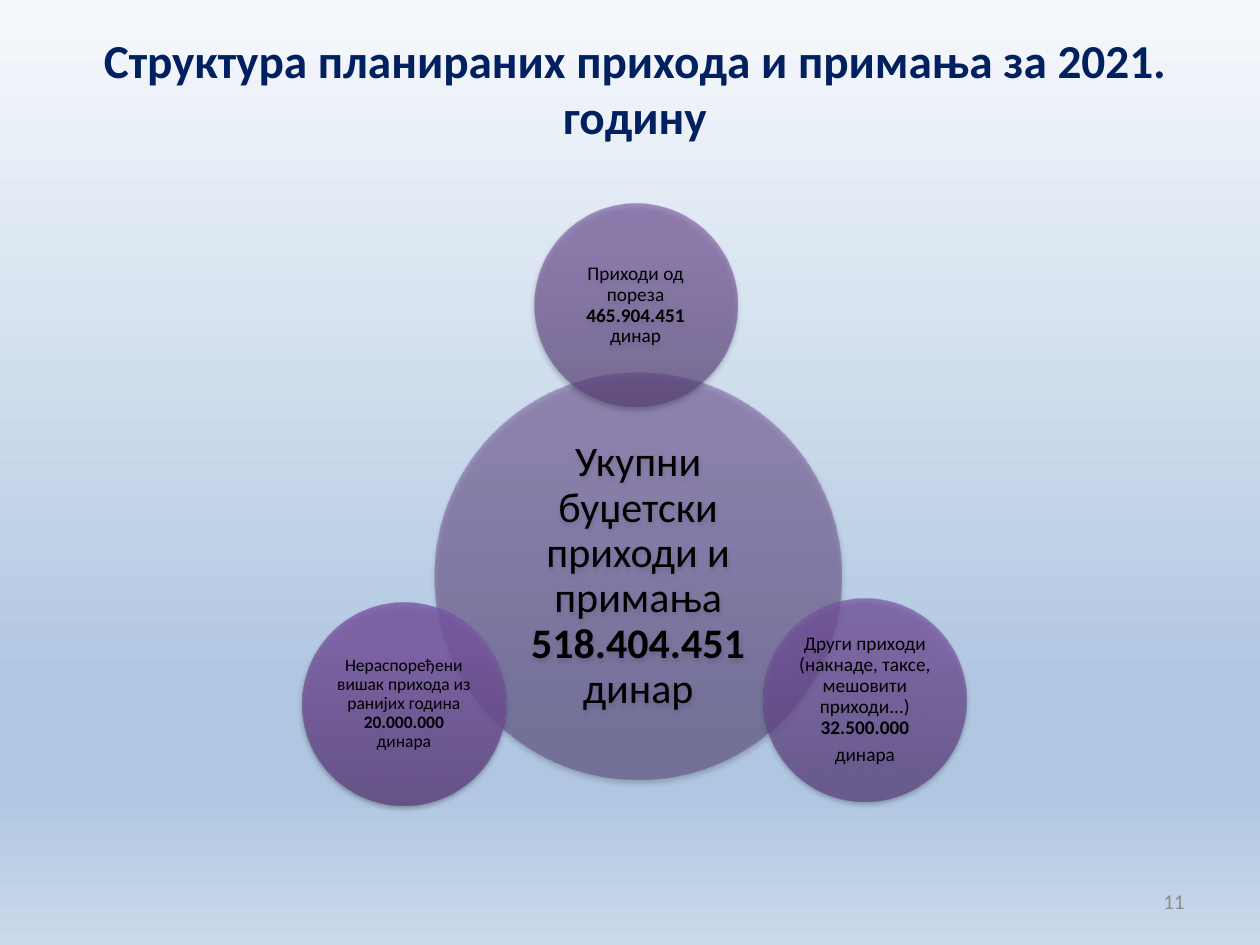
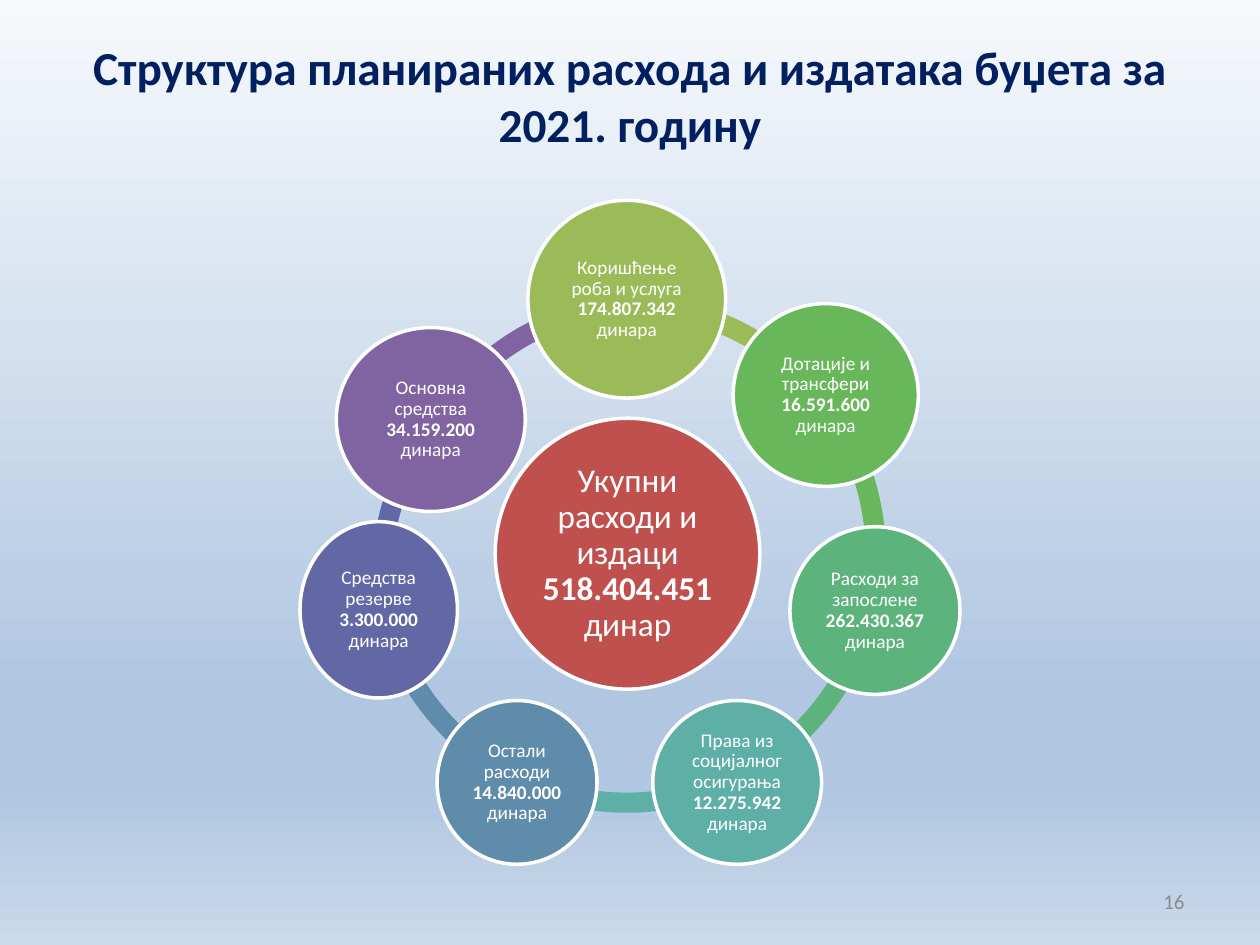
import pptx
import pptx.dml.color
import pptx.enum.shapes
import pptx.enum.text
import pptx.oxml
import pptx.oxml.ns
import pptx.util

Pt = pptx.util.Pt
SHAPE = pptx.enum.shapes.MSO_SHAPE
ALIGN = pptx.enum.text.PP_ALIGN
MIDDLE = pptx.enum.text.MSO_ANCHOR.MIDDLE
qn = pptx.oxml.ns.qn

# Shared look
FONT = "Calibri"
NAVY, GREY, BLACK, WHITE = "002060", "8C8C8C", "000000", "FFFFFF"
BACKGROUND = [(0, "F6F9FC"), (74, "B0C6E1"), (83, "B0C6E1"), (100, "CAD9EB")]
TITLE = {"size": Pt(27), "bold": True}
NUMBER = {"size": Pt(12), "bold": False}
TOTAL = "518.404.451"

# Income: left, top, diameter, size, inset, opacity, gradient, label, amount, unit
INCOME = [
    (248.4, 213.1, 232.6, 24, 2, 50, ("563D74", "705097", "704F99"),
     "Укупни буџетски приходи и примања", TOTAL, "динар"),
    (305.3, 116.6, 115.9, 11, 1.5, 60, ("593F79", "74529D", "74519F"),
     "Приходи од пореза", "465.904.451", "динар"),
    (436.3, 342, 115.9, 11, 1.5, 70, ("5C417D", "7854A3", "7853A5"),
     "Други приходи (накнаде, таксе, мешовити приходи...)", "32.500.000",
     "динара"),
    (172.8, 344.3, 115.9, 10, 1, 80, ("5F4580", "7C59A6", "7C58A8"),
     "Нераспоређени вишак прихода из ранијих година", "20.000.000", "динара"),
]

# Expenses, clockwise from the top: box, colour, label, amount
EXPENSES = [
    ((301.7, 114.5, 113, 113), "9BBB59", "Коришћење роба и услуга",
     "174.807.342"),
    ((419, 173.5, 105.8, 104.4), "69B75B", "Дотације и трансфери",
     "16.591.600"),
    ((451.4, 301, 97.2, 95.8), "5CB37C", "Расходи за запослене",
     "262.430.367"),
    ((373, 400.3, 96.5, 93.6), "5EAFA6", "Права из социјалног осигурања",
     "12.275.942"),
    ((249.8, 400.3, 91.4, 93.6), "608CAB", "Остали расходи", "14.840.000"),
    ((171.4, 298.1, 90, 100.8), "6267A6", "Средства резерве", "3.300.000"),
    ((192.2, 187.2, 108, 105.1), "8064A2", "Основна средства", "34.159.200"),
]
RING_SIZE, RING_WIDTH = 296, 0.039
RING_AT = (210.2, 168.5)
# The last two nodes sit off the regular ring: left, top, start, end angle
SHIFTED_ARCS = {5: (212.4, 181.4, 172.37, 218.16),
                6: (221.8, 167.8, 211.65, 265.35)}


def rgb(value):
    return pptx.dml.color.RGBColor.from_string(value)


def apply(obj, values):
    for name, value in values.items():
        setattr(obj, name, value)


def add_run(p, text, color, font):
    r = p.add_run()
    r.text = text
    apply(r.font, {"name": FONT, **font})
    r.font.color.rgb = rgb(color)


def set_gradient(fill, element, stops, angle, opacity=100):
    """Fill with any number of (percent, colour) stops."""
    fill.gradient()
    fill.gradient_angle = angle
    gs_list = element.find(".//" + qn("a:gsLst"))
    for gs in list(gs_list):
        gs_list.remove(gs)
    for percent, color in stops:
        gs_list.append(pptx.oxml.parse_xml(
            f'<a:gs {pptx.oxml.ns.nsdecls("a")} pos="{percent * 1000}">'
            f'<a:srgbClr val="{color}"><a:alpha val="{opacity * 1000}"/>'
            '</a:srgbClr></a:gs>'))


def add_soft_shadow(shape):
    shape.element.find(".//" + qn("a:effectLst")).append(pptx.oxml.parse_xml(
        f'<a:outerShdw {pptx.oxml.ns.nsdecls("a")} blurRad="{Pt(3.1)}" '
        f'dist="{Pt(1.8)}" dir="5400000" rotWithShape="0">'
        '<a:srgbClr val="000000"><a:alpha val="35000"/></a:srgbClr>'
        '</a:outerShdw>'))


def add_text(s, box, text, color, font, align):
    tf = s.shapes.add_textbox(*map(Pt, box)).text_frame
    apply(tf, {"word_wrap": True, "vertical_anchor": MIDDLE})
    p = tf.paragraphs[0]
    p.alignment = align
    add_run(p, text, color, font)


def add_slide(prs, title, title_box, number):
    s = prs.slides.add_slide(prs.slide_layouts[6])
    set_gradient(s.background.fill, s.element, BACKGROUND, 270)
    add_text(s, title_box, title, NAVY, TITLE, ALIGN.CENTER)
    add_text(s, (516.2, 500.4, 167.8, 28.8), number, GREY, NUMBER, ALIGN.RIGHT)
    return s


def add_plain_shape(s, kind, box):
    sp = s.shapes.add_shape(kind, *map(Pt, box))
    sp.shadow.inherit = False
    sp.line.fill.background()
    return sp


def add_circle(s, box, label, amount, unit, color, size, inset,
               unit_apart=False):
    """Circle with a label, a bold amount and a unit under each other."""
    sp = add_plain_shape(s, SHAPE.OVAL, box)
    tf = sp.text_frame
    apply(tf, {"word_wrap": True, "vertical_anchor": MIDDLE})
    apply(tf, {f"margin_{side}": Pt(inset)
               for side in ("left", "top", "right", "bottom")})
    p = tf.paragraphs[0]
    apply(p, {"alignment": ALIGN.CENTER, "line_spacing": 0.9})
    add_run(p, label, color, {"size": Pt(size), "bold": False})
    p.add_line_break()
    add_run(p, amount, color, {"size": Pt(size), "bold": True})
    if unit_apart:
        p = tf.add_paragraph()
        apply(p, {"alignment": ALIGN.CENTER, "line_spacing": 0.9,
                  "space_before": Pt(0.35 * size)})
    else:
        p.add_line_break()
    add_run(p, unit, color, {"size": Pt(size), "bold": False})
    return sp


def add_income_circle(s, left, top, diameter, size, inset, opacity, colors,
                      label, amount, unit):
    sp = add_circle(s, (left, top, diameter, diameter), label, amount, unit,
                    BLACK, size, inset, unit_apart=label.startswith("Други"))
    set_gradient(sp.fill, sp.element, zip((0, 80, 100), colors), 90, opacity)
    add_soft_shadow(sp)


def add_expense_circle(s, box, fill, label, amount, unit="динара", size=11,
                       inset=1.5):
    sp = add_circle(s, box, label, amount, unit, WHITE, size, inset)
    sp.fill.solid()
    sp.fill.fore_color.rgb = rgb(fill)
    sp.line.color.rgb = rgb(WHITE)
    sp.line.width = Pt(2)


def add_ring_arc(s, index, color):
    step = 360 / len(EXPENSES)
    start = 270 + index * step
    left, top, start, end = SHIFTED_ARCS.get(
        index, (*RING_AT, start % 360, (start + step) % 360))
    sp = add_plain_shape(s, SHAPE.BLOCK_ARC, (left, top, RING_SIZE, RING_SIZE))
    sp.fill.solid()
    sp.fill.fore_color.rgb = rgb(color)
    # Angles are stored in 60000ths of a degree, adjustments in 100000ths
    for i, value in enumerate((start * 0.6, end * 0.6, RING_WIDTH)):
        sp.adjustments[i] = value


def main():
    prs = pptx.Presentation()
    prs.slide_width, prs.slide_height = Pt(720), Pt(540)

    # Income structure
    s = add_slide(prs, "Структура планираних прихода и примања за 2021. годину",
                  (38.9, 19.4, 648, 61.2), "11")
    for circle in INCOME:
        add_income_circle(s, *circle)

    # Expense structure: ring, total, then the nodes
    s = add_slide(
        prs, "Структура планираних расхода и издатака буџета за 2021. годину",
        (36, 20.9, 648, 67), "16")
    for index in reversed(range(len(EXPENSES))):
        add_ring_arc(s, index, EXPENSES[index][1])
    add_expense_circle(s, (283, 239, 151.2, 154.8), "C0504D",
                       "Укупни расходи и издаци", TOTAL, "динар", 19, 2)
    for node in EXPENSES:
        add_expense_circle(s, *node)

    prs.save("out.pptx")


if __name__ == "__main__":
    main()
